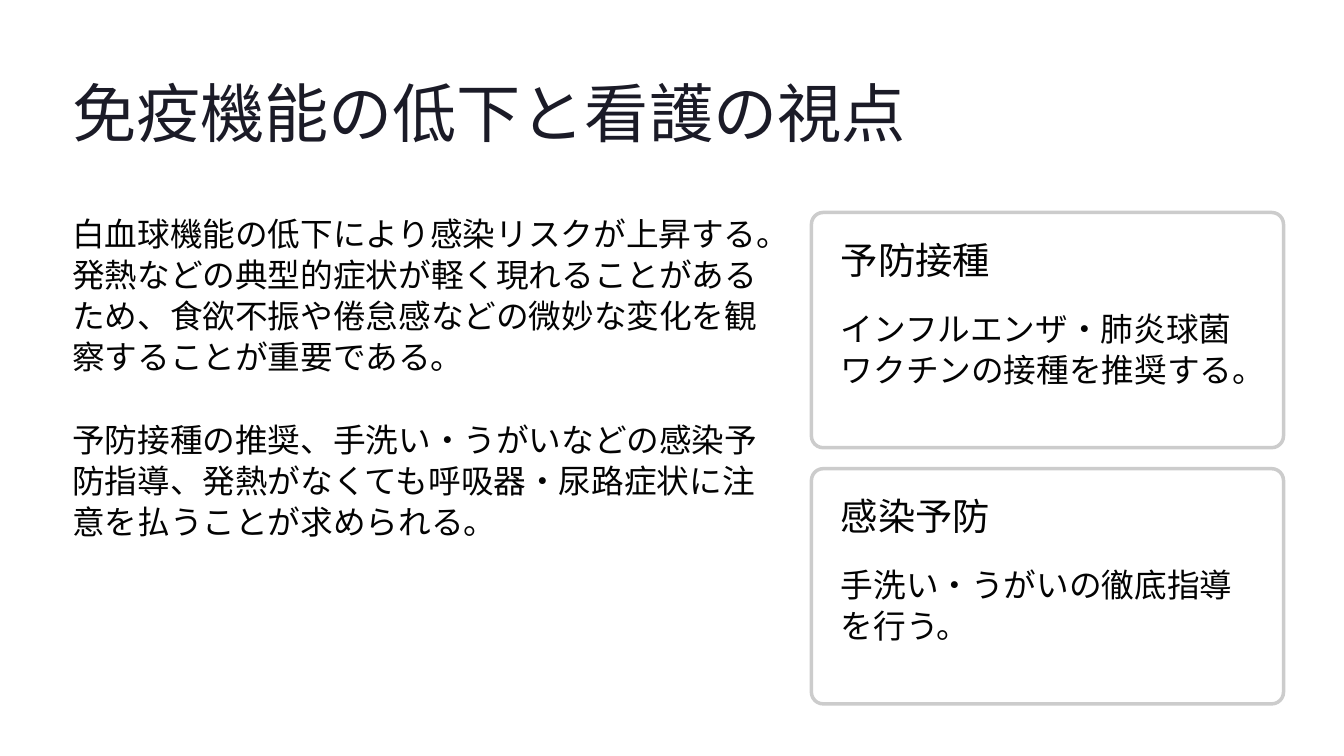
from dataclasses import dataclass

from lxml import etree
from pptx import Presentation
from pptx.dml.color import RGBColor
from pptx.enum.shapes import MSO_SHAPE
from pptx.enum.text import MSO_ANCHOR, MSO_AUTO_SIZE, PP_ALIGN
from pptx.oxml.ns import qn
from pptx.shapes.autoshape import Shape
from pptx.slide import Slide
from pptx.util import Inches, Pt

ROUNDED = MSO_SHAPE.ROUNDED_RECTANGLE
TOP = MSO_ANCHOR.TOP
LEFT = PP_ALIGN.LEFT
NO_AUTOFIT = MSO_AUTO_SIZE.NONE
TITLE_ONLY = 5


@dataclass(frozen=True)
class TextStyle:
    font: str
    size: float
    line_height: float
    color: str
    wrap: bool


@dataclass(frozen=True)
class Theme:
    title: TextStyle = TextStyle("Inter", 55, 68.5, "1B1B27", False)
    heading: TextStyle = TextStyle("Inter", 32, 34, "030303", False)
    body: TextStyle = TextStyle("Roboto", 28, 35, "030303", True)
    card_fill: str = "FFFFFF"
    card_opacity: int = 95
    card_border: str = "CCCCCC"
    border_width: float = 3


@dataclass(frozen=True)
class Box:
    left: float
    top: float
    width: float
    height: float


@dataclass(frozen=True)
class Card:
    heading: str
    advice: str


THEME = Theme()
TITLE = "免疫機能の低下と看護の視点"
PARAGRAPHS = [
    "白血球機能の低下により感染リスクが上昇する。発熱などの典型的症状が軽く現れることがあるため、"
    "食欲不振や倦怠感などの微妙な変化を観察することが重要である。",
    "予防接種の推奨、手洗い・うがいなどの感染予防指導、発熱がなくても呼吸器・尿路症状に注意を払うことが求められる。",
]
CARDS = [
    Card("予防接種", "インフルエンザ・肺炎球菌ワクチンの接種を推奨する。"),
    Card("感染予防", "手洗い・うがいの徹底指導を行う。"),
]
MARGIN = 0.86
CONTENT_TOP = 2.53
PARAGRAPH_PITCH = 2.45
CARD_LEFT, CARD_WIDTH, CARD_HEIGHT = 9.66, 5.62, 2.8
CARD_PITCH = 3.05
CARD_PADDING = 0.35
ADVICE_OFFSET = 1.13


def place(shape: Shape, box: Box) -> None:
    shape.left, shape.top = Inches(box.left), Inches(box.top)
    shape.width, shape.height = Inches(box.width), Inches(box.height)


def write(shape: Shape, text: str, style: TextStyle) -> None:
    frame = shape.text_frame
    frame.text = text
    frame.auto_size = NO_AUTOFIT
    frame.word_wrap = style.wrap
    frame.vertical_anchor = TOP
    frame.margin_left = frame.margin_right = 0
    frame.margin_top = frame.margin_bottom = 0
    paragraph = frame.paragraphs[0]
    paragraph.alignment = LEFT
    paragraph.line_spacing = Pt(style.line_height)
    font = paragraph.runs[0].font
    font.name = style.font
    font.size = Pt(style.size)
    font.color.rgb = RGBColor.from_string(style.color)


def add_text(slide: Slide, box: Box, text: str, style: TextStyle) -> None:
    label = slide.shapes.add_textbox(0, 0, 0, 0)
    place(label, box)
    write(label, text, style)


def add_card(slide: Slide, card: Card, top: float) -> None:
    panel = slide.shapes.add_shape(ROUNDED, 0, 0, 0, 0)
    place(panel, Box(CARD_LEFT, top, CARD_WIDTH, CARD_HEIGHT))
    panel.adjustments[0] = 0.05
    panel.shadow.inherit = False
    panel.fill.solid()
    panel.fill.fore_color.rgb = RGBColor.from_string(THEME.card_fill)
    fill_color = panel.fill._xPr.find(qn("a:solidFill"))[0]
    etree.SubElement(fill_color, qn("a:alpha"), val=str(THEME.card_opacity * 1000))
    panel.line.color.rgb = RGBColor.from_string(THEME.card_border)
    panel.line.width = Pt(THEME.border_width)

    left = CARD_LEFT + CARD_PADDING
    add_text(slide, Box(left, top + CARD_PADDING, 4.08, 0.54), card.heading, THEME.heading)
    add_text(slide, Box(left, top + ADVICE_OFFSET, 4.88, 1.12), card.advice, THEME.body)


def main() -> None:
    deck = Presentation()
    deck.slide_width, deck.slide_height = Inches(16), Inches(9)
    slide = deck.slides.add_slide(deck.slide_layouts[TITLE_ONLY])
    title = slide.shapes.title
    place(title, Box(MARGIN, 0.84, 9.94, 0.96))
    write(title, TITLE, THEME.title)
    for row, text in enumerate(PARAGRAPHS):
        top = CONTENT_TOP + row * PARAGRAPH_PITCH
        add_text(slide, Box(MARGIN, top, 8.27, 1.47), text, THEME.body)
    for row, card in enumerate(CARDS):
        add_card(slide, card, CONTENT_TOP + row * CARD_PITCH)
    deck.save("out.pptx")


if __name__ == "__main__":
    main()
